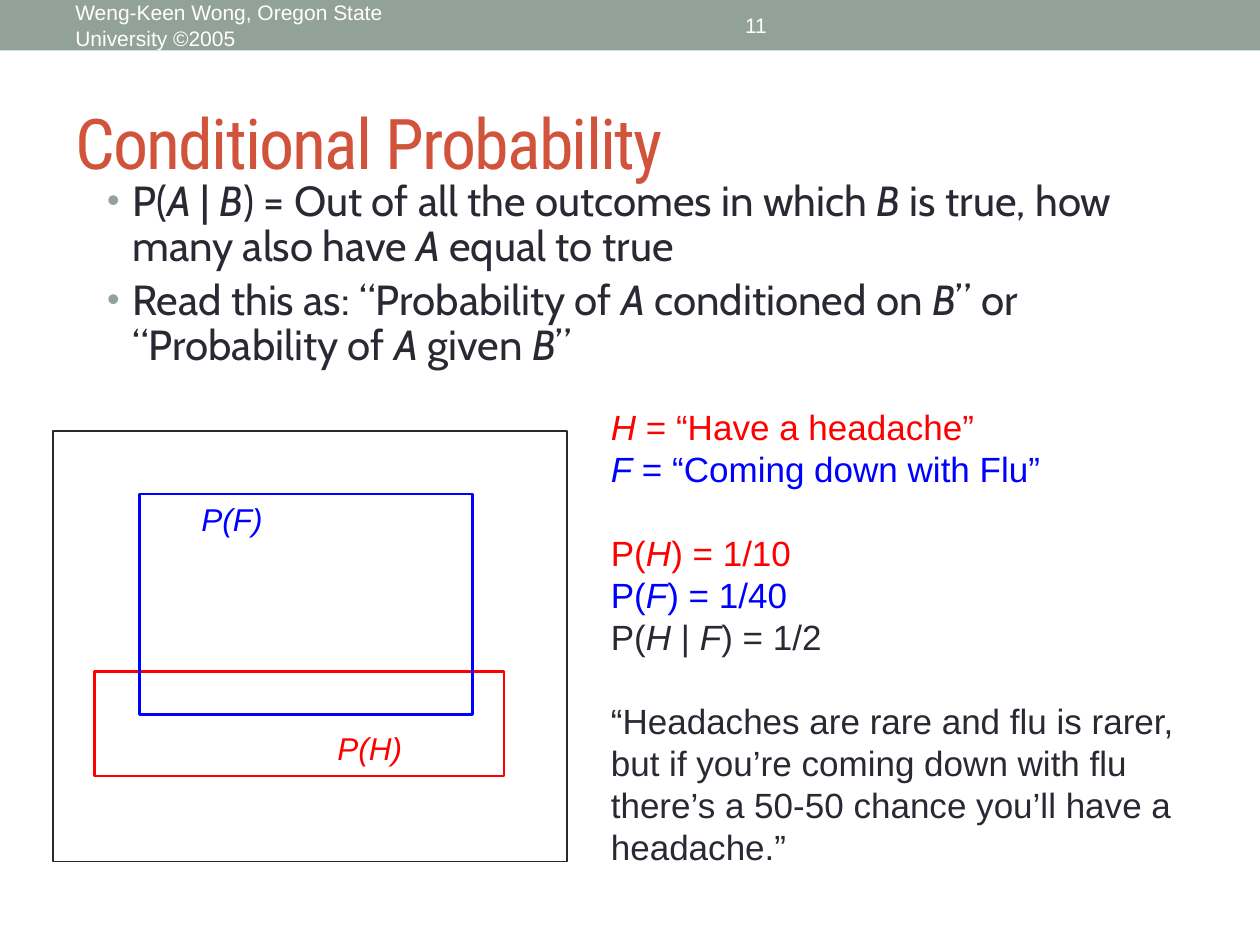
import pptx
import pptx.util
import pptx.dml.color
import pptx.enum.shapes
import pptx.enum.text
import pptx.oxml
import pptx.oxml.ns
from pptx.util import Inches

INK, RED, BLUE = "292934", "FF0000", "0000FF"
SAGE, RUST, WHITE = "93A299", "D2533C", "FFFFFF"
ANCHOR = pptx.enum.text.MSO_ANCHOR
ALIGN = pptx.enum.text.PP_ALIGN


def color(value):
    return pptx.dml.color.RGBColor.from_string(value)


def apply(target, formats):
    for name, value in formats.items():
        setattr(target, name, value)


class SlideBuilder:
    def __init__(self, slide):
        self.slide = slide
        self.font = "Arial"

    def place(self, shape, at):
        names = ("left", "top", "width", "height")
        apply(shape, dict(zip(names, map(Inches, at))))

    def rectangle(self, at, fill=None, line=None, weight=1.5):
        box = self.slide.shapes.add_shape(
            pptx.enum.shapes.MSO_SHAPE.RECTANGLE, *map(Inches, at))
        box.shadow.inherit = False
        if fill:
            box.fill.solid()
            box.fill.fore_color.rgb = color(fill)
        else:
            box.fill.background()
        if line:
            box.line.color.rgb = color(line)
            box.line.width = pptx.util.Pt(weight)
        else:
            box.line.fill.background()

    def add_spans(self, para, text, size, ink, font=None, italic=False):
        for index, piece in enumerate(text.split("*")):
            if piece:
                span = para.add_run()
                span.text = piece
                apply(span.font, {
                    "name": font or self.font,
                    "size": pptx.util.Pt(size),
                    "italic": italic or index % 2 == 1,
                })
                span.font.color.rgb = color(ink)

    def text(self, at, lines, size, anchor=ANCHOR.TOP, align=ALIGN.LEFT, italic=False):
        box = self.slide.shapes.add_textbox(*map(Inches, at))
        frame = box.text_frame
        apply(frame, {"word_wrap": True, "vertical_anchor": anchor})
        for index, (text, ink, gap) in enumerate(lines):
            para = frame.add_paragraph() if index else frame.paragraphs[0]
            apply(para, {"alignment": align, "space_before": pptx.util.Pt(gap)})
            self.add_spans(para, text, size, ink, italic=italic)

    def title(self, at, text):
        box = self.slide.shapes.title
        self.place(box, at)
        apply(box.text_frame, {
            "vertical_anchor": ANCHOR.MIDDLE,
            "auto_size": pptx.enum.text.MSO_AUTO_SIZE.NONE,
        })
        para = box.text_frame.paragraphs[0]
        para.alignment = ALIGN.LEFT
        self.add_spans(para, text, 40, RUST, "Roboto Condensed")
        para.runs[0].font._element.set("spc", "-100")

    def bullets(self, at, items):
        box = self.slide.placeholders[1]
        self.place(box, at)
        frame = box.text_frame
        frame.auto_size = pptx.enum.text.MSO_AUTO_SIZE.NONE
        for index, item in enumerate(items):
            para = frame.add_paragraph() if index else frame.paragraphs[0]
            apply(para, {"line_spacing": 0.9, "space_before": pptx.util.Pt(4.8)})
            self.add_spans(para, item, 24, INK, "Cabin")
            self.bullet(para)

    def bullet(self, para):
        props = para._p.get_or_add_pPr()
        props.set("marL", str(Inches(0.2)))
        props.set("indent", str(Inches(-0.2)))
        namespace = pptx.oxml.ns.nsdecls("a")
        for markup in (
            f'<a:buClr {namespace}><a:srgbClr val="{SAGE}"/></a:buClr>',
            f'<a:buSzPct {namespace} val="85000"/>',
            f'<a:buFont {namespace} typeface="Arial"/>',
            f'<a:buChar {namespace} char="•"/>',
        ):
            props.append(pptx.oxml.parse_xml(markup))


def main():
    deck = pptx.Presentation()
    apply(deck, {"slide_width": Inches(10), "slide_height": Inches(7.5)})
    page = SlideBuilder(deck.slides.add_slide(deck.slide_layouts[1]))

    page.rectangle((0, 0, 10, 0.4), fill=SAGE)
    page.text((0.5, 0.02, 3.17, 0.36),
              [("Weng-Keen Wong, Oregon State University ©2005", WHITE, 0)],
              12, ANCHOR.MIDDLE)
    page.text((3.75, 0.02, 4.5, 0.36), [("11", WHITE, 0)],
              12, ANCHOR.MIDDLE, ALIGN.CENTER)

    page.title((0.5, 0.58, 9, 1.08), "Conditional Probability")
    page.bullets((0.75, 1.38, 8.5, 1.83), [
        "P(*A *| *B*) = Out of all the outcomes in which *B* is true, "
        "how many also have *A* equal to true",
        "Read this as: “Probability of *A* conditioned on *B*” or "
        "“Probability of *A* given *B*”",
    ])

    page.text((1.5, 3.92, 1.42, 0.4), [("P(F)", BLUE, 0)], 18, italic=True)
    page.text((2.58, 5.74, 1.67, 0.4), [("P(H)", RED, 0)], 18, italic=True)
    page.rectangle((0.42, 3.42, 4.08, 3.42), line=INK, weight=0.75)
    page.text((4.75, 3.17, 5, 3.8), [
        ("*H *= “Have a headache”", RED, 0),
        ("*F* = “Coming down with Flu”", BLUE, 0),
        ("P(*H*) = 1/10", RED, 24),
        ("P(*F*) = 1/40", BLUE, 0),
        ("P(*H *| *F*) = 1/2", INK, 0),
        ("“Headaches are rare and flu is rarer, but if you’re coming down "
         "with flu there’s a 50-50 chance you’ll have a headache.”", INK, 24),
    ], 20)
    page.rectangle((0.75, 5.33, 3.25, 0.83), line=RED)
    page.rectangle((1.11, 3.92, 2.64, 1.75), line=BLUE)

    deck.save("out.pptx")


if __name__ == "__main__":
    main()
